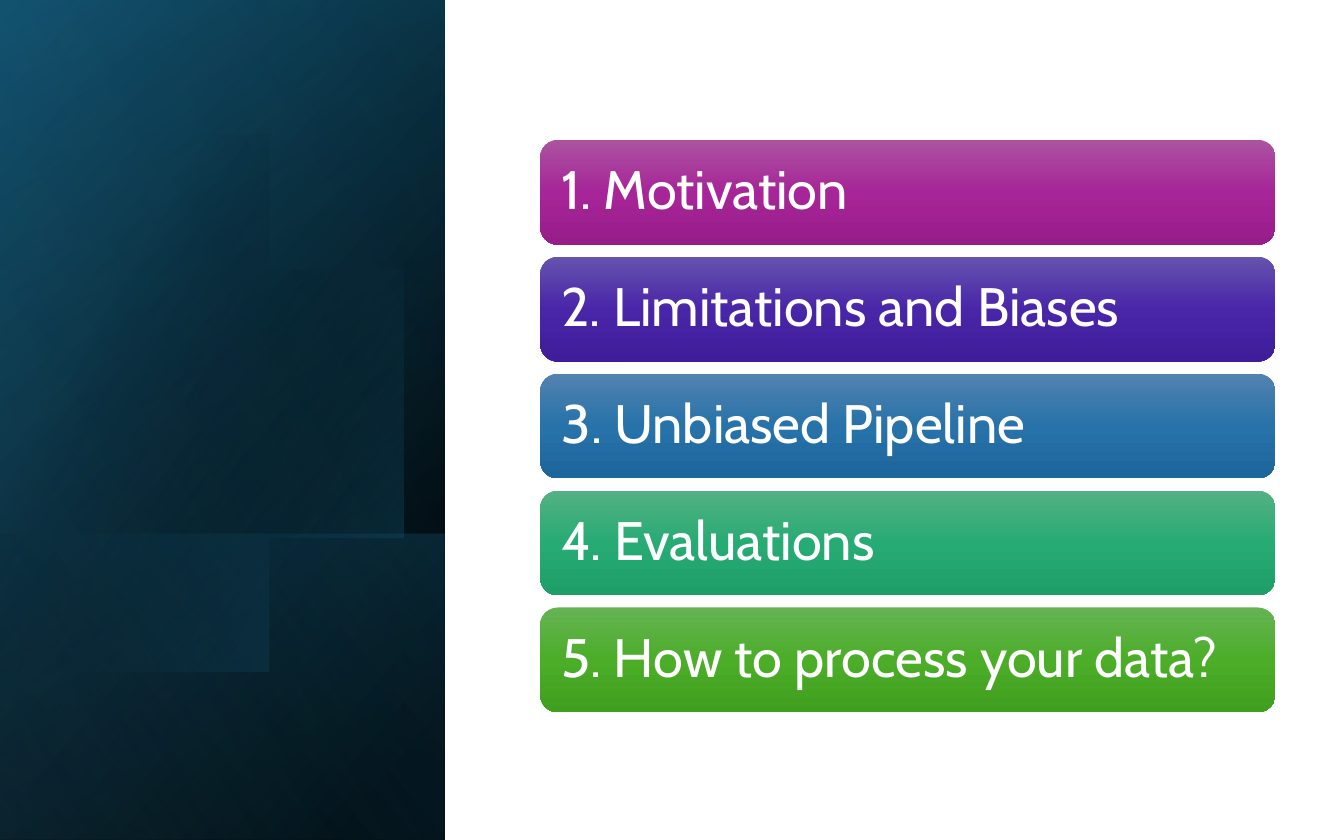
from lxml.etree import SubElement
from pptx import Presentation
from pptx.dml.color import RGBColor
from pptx.enum.shapes import MSO_SHAPE
from pptx.enum.text import MSO_ANCHOR, PP_ALIGN
from pptx.oxml.ns import qn
from pptx.util import Inches, Pt

WIDTH, HEIGHT = 10, 6.25
PANEL_SHARE = 0.331

AGENDA = [
    ("1. Motivation", ("AC53A0", "A62598", "991C8B")),
    ("2. Limitations and Biases", ("6553AE", "4926A8", "3E1C9A")),
    ("3. Unbiased Pipeline", ("5382AF", "2772A9", "1D669C")),
    ("4. Evaluations", ("54B183", "27AB74", "1E9E68")),
    ("5. How to process your data?", ("66B354", "4BAD28", "409F1E")),
]

DISC_START = (1.06, 0.93)
DISC_RIGHT = [
    ((1.8, 0.97), (2.49, 1.52), (2.73, 2.35)),
    ((3.02, 3.36), (2.52, 4.39), (1.61, 4.65)),
    ((1.04, 4.81), (0.44, 4.64), (0.01, 4.24)),
]
DISC_EDGE = [(-0.09, 4.14), (-0.16, 1.43), (-0.05, 1.32)]
DISC_TOP = [
    ((0.12, 1.17), (0.32, 1.06), (0.55, 0.99)),
    ((0.72, 0.94), (0.89, 0.92), DISC_START),
]


def color(value):
    return RGBColor.from_string(value)


def follow_curves(start, curves, steps=24):
    points = []
    for first, second, end in curves:
        for step in range(1, steps + 1):
            t = step / steps
            weights = ((1 - t) ** 3, 3 * t * (1 - t) ** 2, 3 * t * t * (1 - t), t ** 3)
            corners = (start, first, second, end)
            points.append(tuple(
                sum(weight * corner[axis] for weight, corner in zip(weights, corners))
                for axis in (0, 1)
            ))
        start = end
    return points


class AgendaSlide:
    font = "Cabin"
    text_size = 29
    text_color = "FFFFFF"

    def __init__(self, presentation):
        self.slide = presentation.slides.add_slide(presentation.slide_layouts[6])
        self.width = presentation.slide_width
        self.height = presentation.slide_height

    def shade(self, shape, stops, angle):
        shape.shadow.inherit = False
        shape.line.fill.background()
        shape.fill.gradient()
        shape.fill.gradient_angle = (360 - angle) % 360
        stop_list = next(shape._element.spPr.iter(qn("a:gsLst")))
        for stop in list(stop_list):
            stop_list.remove(stop)
        for position, value, opacity in stops:
            stop = SubElement(stop_list, qn("a:gs"), pos=str(position * 1000))
            tint = SubElement(stop, qn("a:srgbClr"), val=value)
            if opacity < 100:
                SubElement(tint, qn("a:alpha"), val=str(opacity * 1000))

    def panel(self, top, height, stops, angle):
        across, down = int(PANEL_SHARE * self.width), int(height * self.height)
        left = (across - down) // 2
        upper = int(top * self.height) + (down - across) // 2
        panel = self.slide.shapes.add_shape(MSO_SHAPE.RECTANGLE, left, upper, down, across)
        panel.rotation = 90
        panel._element.spPr.find(qn("a:xfrm")).set("flipH", "1")
        self.shade(panel, stops, angle)

    def disc(self, stops, angle):
        right = follow_curves(DISC_START, DISC_RIGHT)
        top = follow_curves(DISC_EDGE[-1], DISC_TOP)
        builder = self.slide.shapes.build_freeform(*DISC_START, scale=Inches(1))
        builder.add_line_segments(right + DISC_EDGE + top, close=True)
        self.shade(builder.convert_to_shape(), stops, angle)

    def bar(self, left, top, width, height, topic, shades):
        bar = self.slide.shapes.add_shape(
            MSO_SHAPE.ROUNDED_RECTANGLE,
            int(left * self.width), int(top * self.height),
            int(width * self.width), int(height * self.height),
        )
        self.shade(bar, [(i * 50, shade, 100) for i, shade in enumerate(shades)], 90)
        frame = bar.text_frame
        frame.text = topic
        frame.word_wrap = True
        frame.vertical_anchor = MSO_ANCHOR.MIDDLE
        frame.margin_left = frame.margin_right = Inches(0.12)
        frame.margin_top = frame.margin_bottom = Inches(0.12)
        paragraph = frame.paragraphs[0]
        paragraph.alignment = PP_ALIGN.LEFT
        paragraph.line_spacing = 0.9
        font = paragraph.runs[0].font
        font.name = self.font
        font.size = Pt(self.text_size)
        font.color.rgb = color(self.text_color)


def main():
    presentation = Presentation()
    presentation.slide_width = Inches(WIDTH)
    presentation.slide_height = Inches(HEIGHT)
    agenda = AgendaSlide(presentation)

    agenda.panel(0, 1, [(8, "000000", 100), (100, "104862", 100)], 50)
    agenda.panel(0, 1, [(0, "000000", 0), (99, "156082", 46)], 30)
    agenda.panel(0.635, 0.365, [(2, "156082", 29), (100, "000000", 30)], 130)
    agenda.disc([(29, "000000", 0), (100, "156082", 43)], 30)
    agenda.panel(0, 1, [(0, "000000", 0), (99, "46B1E1", 11)], 120)

    first_top, pitch, bar_height = 1.04 / HEIGHT, 0.87 / HEIGHT, 0.78 / HEIGHT
    for row, (topic, shades) in enumerate(AGENDA):
        agenda.bar(0.402, first_top + row * pitch, 0.547, bar_height, topic, shades)

    presentation.save("out.pptx")


if __name__ == "__main__":
    main()
